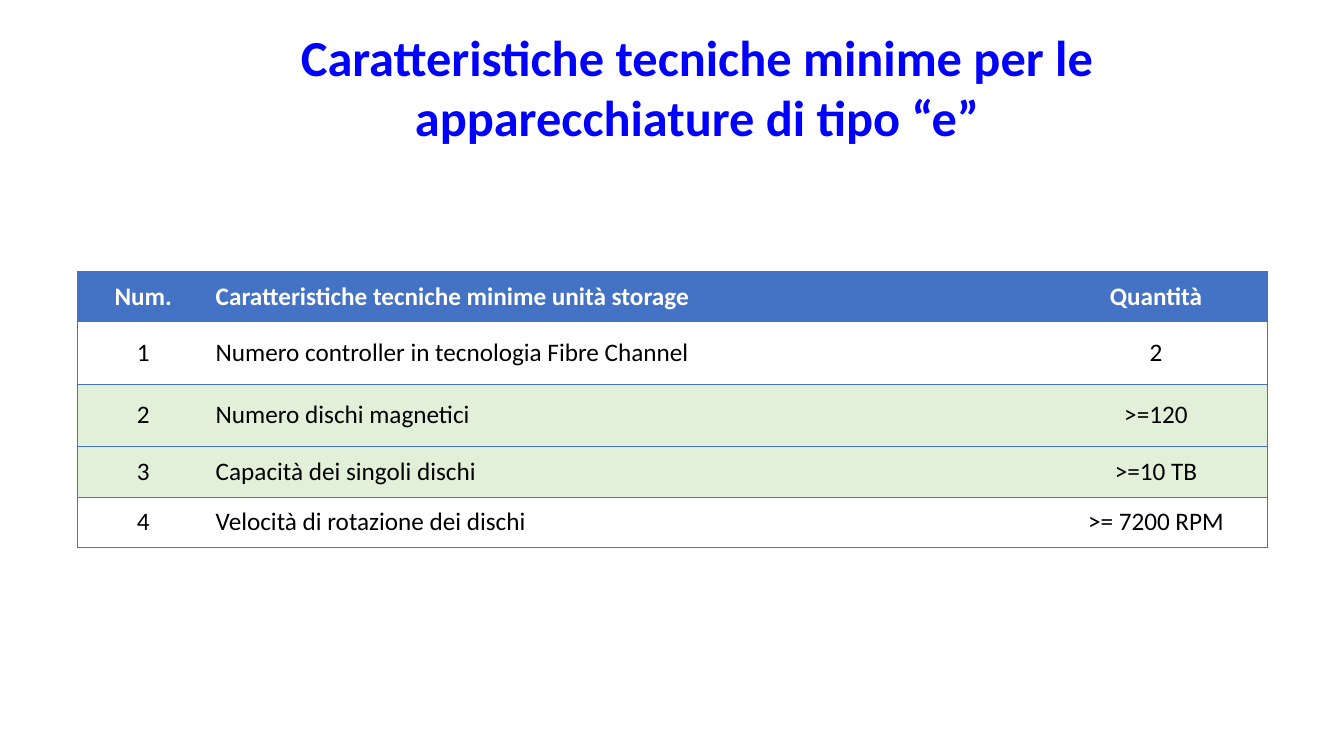
from lxml.etree import SubElement
from pptx import Presentation
from pptx.dml.color import RGBColor
from pptx.enum.text import MSO_ANCHOR, PP_ALIGN
from pptx.oxml.ns import qn
from pptx.util import Inches, Pt

COLORS = {"title": "0000FF", "blue": "4472C4", "green": "E2F0D9",
          "white": "FFFFFF", "black": "000000"}
FONT = "Calibri"
BORDER_WIDTH = Pt(0.5)
CELL_FORMAT = {"vertical_anchor": MSO_ANCHOR.MIDDLE,
               "margin_left": Inches(0.07), "margin_right": Inches(0.07),
               "margin_top": 0, "margin_bottom": 0}

TITLE = "Caratteristiche tecniche minime per le apparecchiature di tipo “e”"
REQUIREMENTS = [
    ("Num.", "Caratteristiche tecniche minime unità storage", "Quantità"),
    ("1", "Numero controller in tecnologia Fibre Channel", "2"),
    ("2", "Numero dischi magnetici", ">=120"),
    ("3", "Capacità dei singoli dischi", ">=10 TB"),
    ("4", "Velocità di rotazione dei dischi", ">= 7200 RPM"),
]
COLUMN_WIDTHS = [1.3, 8.29, 2.21]
COLUMN_ALIGNS = [PP_ALIGN.CENTER, PP_ALIGN.LEFT, PP_ALIGN.CENTER]
ROW_HEIGHTS = [0.5, 0.62, 0.62, 0.5, 0.5]
ROW_FILLS = ["blue", "white", "green", "green", "white"]


def write(paragraph, text, size, color, bold, align):
    paragraph.alignment = align
    run = paragraph.add_run()
    run.text = text
    font_format = {"name": FONT, "size": Pt(size), "bold": bold}
    for key, value in font_format.items():
        setattr(run.font, key, value)
    run.font.color.rgb = RGBColor.from_string(COLORS[color])


def set_borders(cell, visible_sides):
    """Draw the visible sides in blue and clear the others."""
    properties = cell._tc.get_or_add_tcPr()
    for side in "LRTB":
        line = SubElement(properties, qn(f"a:ln{side}"), w=str(BORDER_WIDTH))
        if side in visible_sides:
            fill = SubElement(line, qn("a:solidFill"))
            SubElement(fill, qn("a:srgbClr"), val=COLORS["blue"])
        else:
            SubElement(line, qn("a:noFill"))


def add_title(slide, left, top, width, height):
    title = slide.shapes.add_textbox(Inches(left), Inches(top),
                                     Inches(width), Inches(height))
    title.text_frame.word_wrap = True
    paragraph = title.text_frame.paragraphs[0]
    write(paragraph, TITLE, 36, "title", True, PP_ALIGN.CENTER)
    paragraph.level = 1
    paragraph._p.get_or_add_pPr().set("marL", str(Inches(0.5)))


def add_requirements(slide, left, top, width, height):
    table = slide.shapes.add_table(
        len(REQUIREMENTS), len(COLUMN_WIDTHS), Inches(left), Inches(top),
        Inches(width), Inches(height)).table
    table.horz_banding = False
    for column, column_width in zip(table.columns, COLUMN_WIDTHS):
        column.width = Inches(column_width)
    for row, row_height in zip(table.rows, ROW_HEIGHTS):
        row.height = Inches(row_height)

    outer_sides = {0: "L", len(COLUMN_WIDTHS) - 1: "R"}
    for r, requirement in enumerate(REQUIREMENTS):
        is_header = r == 0
        for c, text in enumerate(requirement):
            cell = table.cell(r, c)
            for key, value in CELL_FORMAT.items():
                setattr(cell, key, value)
            set_borders(cell, "TB" + outer_sides.get(c, ""))
            cell.fill.solid()
            cell.fill.fore_color.rgb = RGBColor.from_string(COLORS[ROW_FILLS[r]])
            write(cell.text_frame.paragraphs[0], text, 18,
                  "white" if is_header else "black", is_header, COLUMN_ALIGNS[c])


def main():
    deck = Presentation()
    deck.slide_width, deck.slide_height = Inches(13.33), Inches(7.5)
    slide = deck.slides.add_slide(deck.slide_layouts[6])
    # Table of minimum requirements
    add_requirements(slide, 0.77, 2.69, sum(COLUMN_WIDTHS), sum(ROW_HEIGHTS))
    # Heading
    add_title(slide, 0.67, 0.21, 11.99, 1.31)
    deck.save("out.pptx")


if __name__ == "__main__":
    main()
